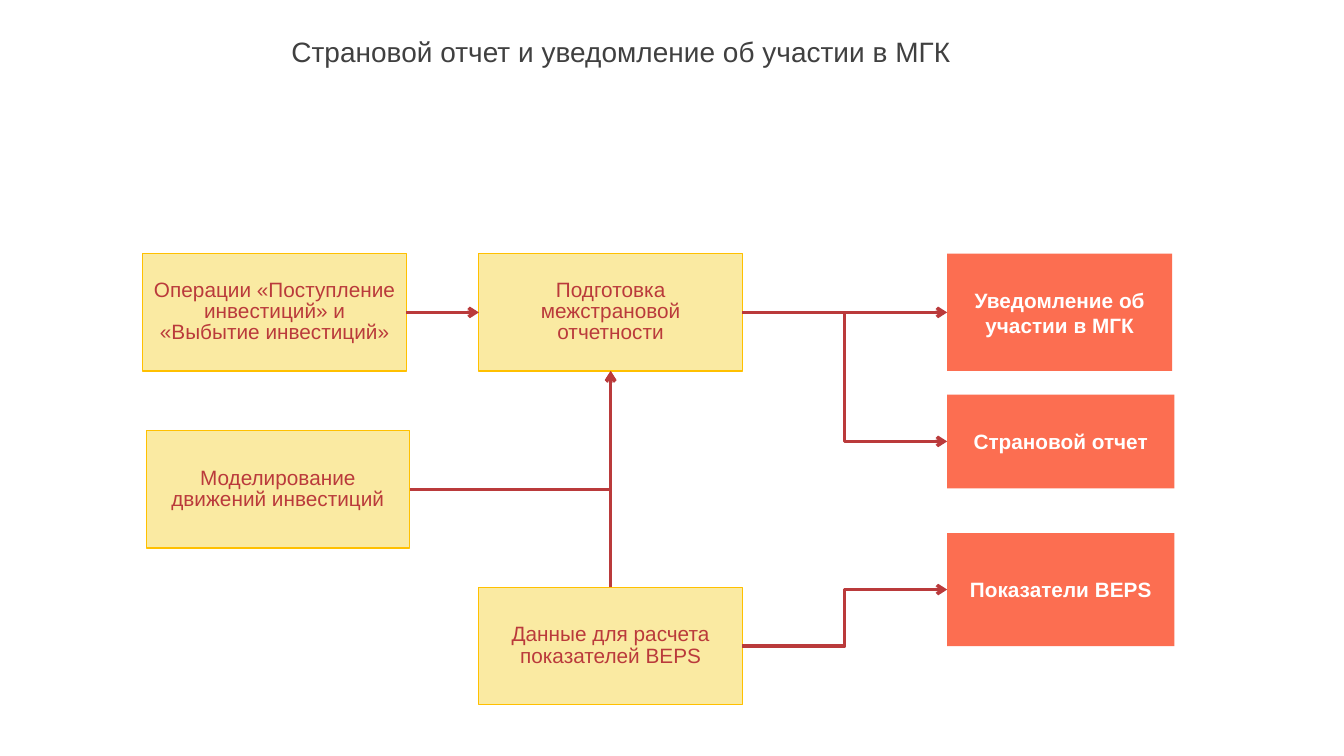
from pptx import Presentation
from pptx.dml.color import RGBColor
from pptx.enum.shapes import MSO_CONNECTOR as Link, MSO_SHAPE as Shape
from pptx.enum.text import MSO_ANCHOR as Anchor, PP_ALIGN as Align
from pptx.oxml.ns import qn
from pptx.util import Inches, Pt
from lxml.etree import SubElement

RED, CORAL, CREAM, GOLD = "BA3A3B", "FC6E51", "F9E383", "FFC000"
TOP, LEFT, BOTTOM, RIGHT = range(4)


def paint(target, color):
    target.rgb = RGBColor.from_string(color)


def write(shape, text, size=14, color=RED, bold=False, spacing=1.0):
    frame = shape.text_frame
    frame.word_wrap = True
    frame.vertical_anchor = Anchor.MIDDLE
    para = frame.paragraphs[0]
    para.alignment = Align.CENTER
    para.line_spacing = spacing
    run = para.add_run()
    run.text = text
    run.font.name = "Arial"
    run.font.size = Pt(size)
    run.font.bold = bold
    paint(run.font.color, color)


def add_title(slide, box, text):
    shape = slide.shapes.add_textbox(*map(Inches, box))
    write(shape, text, size=18.9, color="404040", spacing=0.9)


def add_box(slide, box, fill):
    shape = slide.shapes.add_shape(Shape.RECTANGLE, *map(Inches, box))
    shape.shadow.inherit = False
    shape.fill.solid()
    paint(shape.fill.fore_color, fill)
    return shape


def add_step(slide, box, text):
    shape = add_box(slide, box, CREAM)
    tint = shape.fill._xPr.find(qn("a:solidFill"))[0]
    SubElement(tint, qn("a:alpha")).set("val", "75000")
    paint(shape.line.color, GOLD)
    shape.line.width = Pt(0.75)
    write(shape, text, spacing=0.85)
    return shape


def add_report(slide, box, text):
    shape = add_box(slide, box, CORAL)
    shape.line.fill.background()
    write(shape, text, color="FFFFFF", bold=True)
    return shape


def add_arrow(slide, start, end, kind=Link.STRAIGHT, sites=(RIGHT, LEFT), preset=None):
    """Link two boxes at their connection sites; preset overrides the bend."""
    arrow = slide.shapes.add_connector(kind, 0, 0, 0, 0)
    arrow.begin_connect(start, sites[0])
    arrow.end_connect(end, sites[1])
    paint(arrow.line.color, RED)
    arrow.line.width = Pt(2.25)
    props = arrow._element.spPr
    if preset:
        props.find(qn("a:prstGeom")).set("prst", preset)
    SubElement(props.find(qn("a:ln")), qn("a:tailEnd")).set("type", "arrow")
    SubElement(props, qn("a:effectLst"))


def add_flow(slide, box):
    """Place steps on the left, reports on the right, and link them."""
    x, y, width, _ = box
    wide, high = 2.47, 1.1
    mid, side = x + 3.15, x + width - 2.13

    deals = add_step(slide, (x, y, wide, high),
                     "Операции «Поступление инвестиций» и «Выбытие инвестиций»")
    prep = add_step(slide, (mid, y, wide, high),
                    "Подготовка межстрановой отчетности")
    model = add_step(slide, (x + 0.03, y + 1.66, wide, high),
                     "Моделирование движений инвестиций")
    data = add_step(slide, (mid, y + 3.13, wide, high),
                    "Данные для расчета показателей BEPS")

    notice = add_report(slide, (side, y, 2.11, high),
                        "Уведомление об участии в МГК")
    country = add_report(slide, (side, y + 1.32, 2.13, 0.88), "Страновой отчет")
    beps = add_report(slide, (side, y + 2.62, 2.13, 1.06), "Показатели BEPS")

    add_arrow(slide, deals, prep)
    add_arrow(slide, prep, notice)
    add_arrow(slide, data, prep, sites=(TOP, BOTTOM))
    add_arrow(slide, model, prep, Link.ELBOW, (RIGHT, BOTTOM), "bentConnector2")
    add_arrow(slide, prep, country, Link.ELBOW)
    add_arrow(slide, data, beps, Link.ELBOW)


def main():
    deck = Presentation()
    deck.slide_width, deck.slide_height = Inches(12.6), Inches(7.09)
    slide = deck.slides.add_slide(deck.slide_layouts[6])
    add_title(slide, (1.81, 0.31, 8.03, 0.38),
              "Страновой отчет и уведомление об участии в МГК")
    add_flow(slide, (1.34, 2.38, 9.67, 4.23))
    deck.save("out.pptx")


if __name__ == "__main__":
    main()
